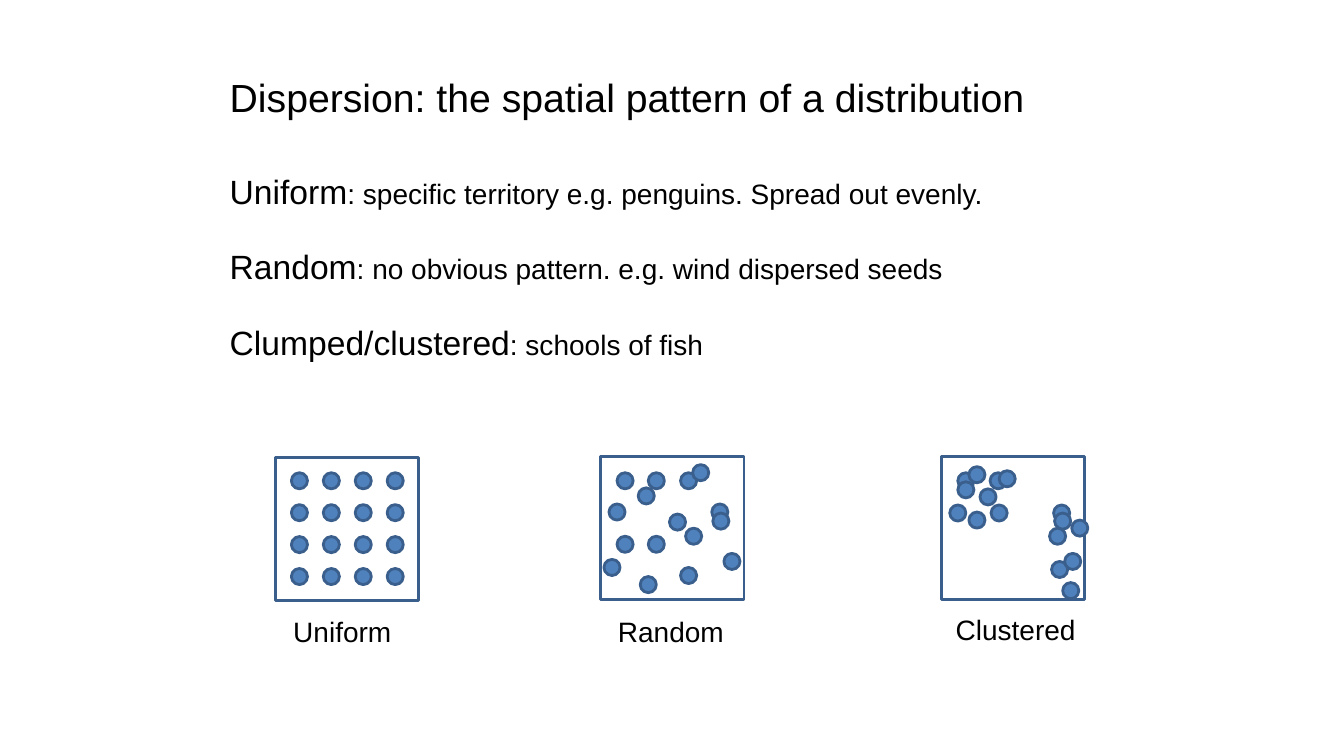
"""Build a slide on uniform, random and clustered dispersion patterns."""
import pptx
import pptx.dml.color
import pptx.enum.shapes
import pptx.enum.text
import pptx.util

Inches = pptx.util.Inches
Pt = pptx.util.Pt
Shape = pptx.enum.shapes.MSO_SHAPE

BLACK = pptx.dml.color.RGBColor(0x00, 0x00, 0x00)
DOT_BLUE = pptx.dml.color.RGBColor(0x4F, 0x81, 0xBD)
LINE_BLUE = pptx.dml.color.RGBColor(0x3A, 0x5F, 0x8C)
FONT = "Arial"
SQUARE = 1.42
DOT = 0.16
GRID_STEP = 0.95 / 3

DEFINITIONS = [
    (0, [("Dispersion: the spatial pattern of a distribution", 28)]),
    (36, [("Uniform", 24), (": specific territory e.g. penguins. Spread out evenly.", 20)]),
    (25, [("Random", 24), (": no obvious pattern. e.g. wind dispersed seeds", 20)]),
    (25, [("Clumped/clustered", 24), (": schools of fish", 20)]),
]

UNIFORM_DOTS = [
    (0.16 + column * GRID_STEP, 0.15 + row * GRID_STEP)
    for row in range(4) for column in range(4)
]
RANDOM_DOTS = [
    (0.16, 0.16), (0.47, 0.16), (0.79, 0.16), (0.91, 0.08),
    (0.08, 0.47), (0.37, 0.31), (0.84, 0.71), (1.10, 0.47),
    (0.16, 0.79), (0.47, 0.79), (0.68, 0.57), (1.11, 0.56),
    (0.03, 1.02), (0.39, 1.19), (0.79, 1.10), (1.22, 0.96),
]
CLUSTERED_DOTS = [
    (0.16, 0.16), (0.48, 0.16), (0.57, 0.14), (0.27, 0.10),
    (0.08, 0.48), (0.38, 0.32), (1.07, 0.71), (1.11, 0.48),
    (0.16, 0.25), (0.27, 0.55), (0.49, 0.48), (1.12, 0.56),
    (1.20, 1.25), (1.29, 0.63), (1.09, 1.04), (1.22, 0.96),
]

PANELS = [
    {"square": (2.73, 4.54), "dots": UNIFORM_DOTS, "grouped": True,
     "label": "Uniform", "label_box": (2.81, 6.05, 1.18, 0.44)},
    {"square": (5.96, 4.53), "dots": RANDOM_DOTS, "grouped": False,
     "label": "Random", "label_box": (6.03, 6.05, 1.26, 0.44)},
    {"square": (9.34, 4.53), "dots": CLUSTERED_DOTS, "grouped": False,
     "label": "Clustered", "label_box": (9.38, 6.03, 1.40, 0.44)},
]


def add_text(slide, box, paragraphs):
    frame = slide.shapes.add_textbox(*map(Inches, box)).text_frame
    frame.word_wrap = False
    frame.auto_size = pptx.enum.text.MSO_AUTO_SIZE.SHAPE_TO_FIT_TEXT
    for index, (space_before, runs) in enumerate(paragraphs):
        paragraph = frame.add_paragraph() if index else frame.paragraphs[0]
        paragraph.space_before = Pt(space_before)
        for text, size in runs:
            run = paragraph.add_run()
            run.text = text
            run.font.name = FONT
            run.font.size = Pt(size)
            run.font.color.rgb = BLACK


def add_outlined(shapes, kind, left, top, size):
    shape = shapes.add_shape(kind, Inches(left), Inches(top), Inches(size), Inches(size))
    shape.shadow.inherit = False
    shape.line.color.rgb = LINE_BLUE
    shape.line.width = Pt(2)
    return shape


def add_panel(slide, panel):
    shapes = slide.shapes.add_group_shape().shapes if panel["grouped"] else slide.shapes
    left, top = panel["square"]
    square = add_outlined(shapes, Shape.RECTANGLE, left, top, SQUARE)
    square.fill.background()
    for across, down in panel["dots"]:
        dot = add_outlined(shapes, Shape.OVAL, left + across, top + down, DOT)
        dot.fill.solid()
        dot.fill.fore_color.rgb = DOT_BLUE
    add_text(slide, panel["label_box"], [(0, [(panel["label"], 20)])])


def main():
    presentation = pptx.Presentation()
    presentation.slide_width = Inches(13.33)
    presentation.slide_height = Inches(7.5)
    slide = presentation.slides.add_slide(presentation.slide_layouts[6])
    add_text(slide, (2.18, 0.68, 8.18, 3.26), DEFINITIONS)
    for panel in PANELS:
        add_panel(slide, panel)
    presentation.save("out.pptx")


if __name__ == "__main__":
    main()
